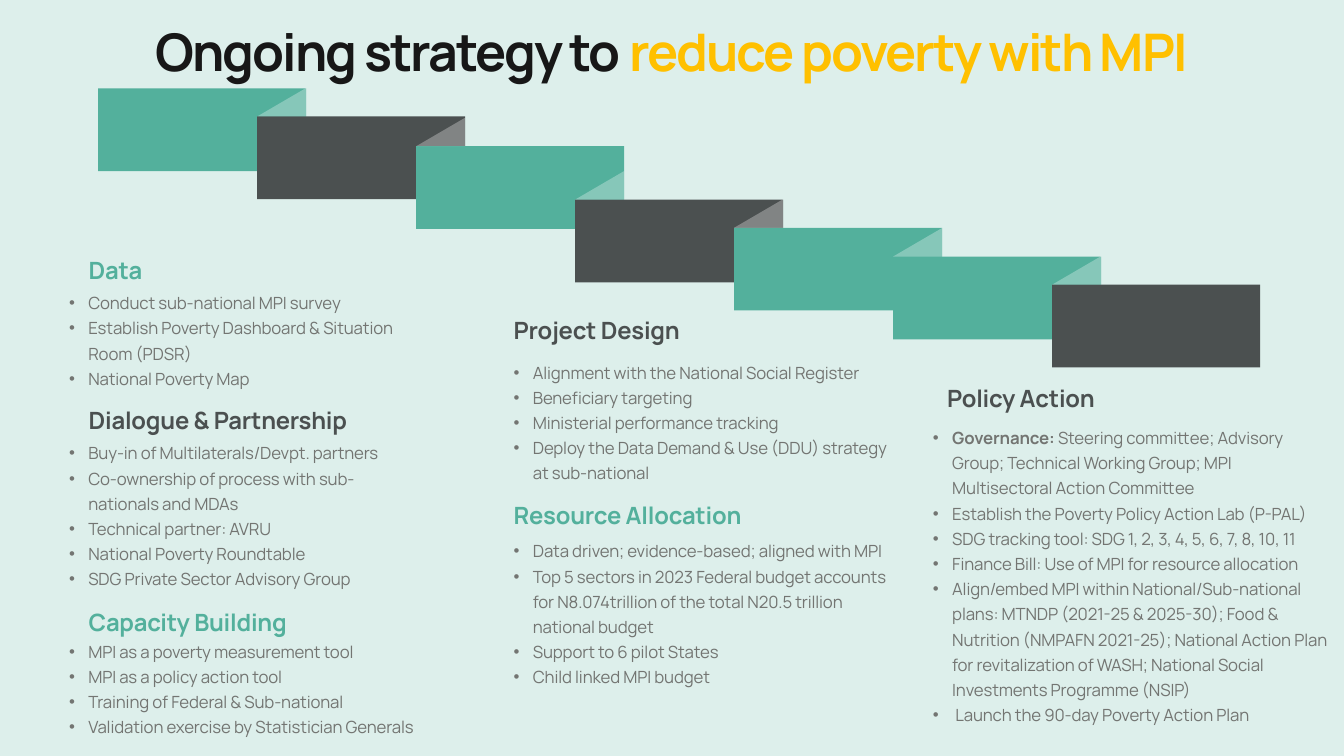
from collections import namedtuple
from dataclasses import dataclass

from lxml.etree import SubElement
from pptx import Presentation
from pptx.dml.color import RGBColor as Rgb
from pptx.enum.shapes import MSO_SHAPE as Shape
from pptx.enum.text import MSO_ANCHOR as Anchor, MSO_AUTO_SIZE as Auto, PP_ALIGN as Align
from pptx.oxml.ns import qn
from pptx.util import Cm, Pt


@dataclass(frozen=True)
class Theme:
    font: str = "Manrope"
    back: str = "DDEFEB"
    teal: str = "53B09C"
    slate: str = "4B5050"
    ink: str = "171717"
    gold: str = "FFC000"
    body: str = "737572"
    white: str = "FFFFFF"
    title: int = 74
    head: int = 34
    text: int = 24
    pitch: int = 36


THEME = Theme()
LINE = 1.27
INDENT = 0.97

Box = namedtuple("Box", "left top width height")
Part = namedtuple("Part", "drop gap width lines color title items")

TOPS = [0, 1.42, 2.92, 5.61, 7.03, 8.48, 9.9]
TINTS = [THEME.teal, THEME.slate, THEME.teal, THEME.slate,
         THEME.teal, THEME.teal, THEME.slate]

LEFT = [
    Part(0, 1.71, 17.75, 4, THEME.teal, "Data", [
        "Conduct sub-national MPI survey",
        "Establish Poverty Dashboard & Situation Room (PDSR)",
        "National Poverty Map"]),
    Part(7.57, 1.71, 17.75, 6, THEME.slate, "Dialogue & Partnership", [
        "Buy-in of Multilaterals/Devpt. partners",
        "Co-ownership of process with sub-nationals and MDAs",
        "Technical partner: AVRU",
        "National Poverty Roundtable",
        "SDG Private Sector Advisory Group"]),
    Part(17.76, 1.52, 19.79, 4, THEME.teal, "Capacity Building", [
        "MPI as a poverty measurement tool",
        "MPI as a policy action tool",
        "Training of Federal & Sub-national",
        "Validation exercise by Statistician Generals"]),
]
MIDDLE = [
    Part(0, 2.16, 19.58, 5, THEME.slate, "Project Design", [
        "Alignment with the National Social Register",
        "Beneficiary targeting",
        "Ministerial performance tracking",
        "Deploy the Data Demand & Use (DDU) strategy at sub-national"]),
    Part(9.32, 1.85, 20.09, 6, THEME.teal, "Resource Allocation", [
        "Data driven; evidence-based; aligned with MPI",
        "Top 5 sectors in 2023 Federal budget accounts for N8.074trillion "
        "of the total N20.5 trillion national budget",
        "Support to 6 pilot States",
        "Child linked MPI budget"]),
]
RIGHT = [
    Part(0, 2.03, 20.52, 12, THEME.slate, "Policy Action", [
        ("Governance: ", "Steering committee; Advisory Group; Technical Working "
                         "Group; MPI Multisectoral Action Committee"),
        "Establish the Poverty Policy Action Lab (P-PAL)",
        "SDG tracking tool: SDG 1, 2, 3, 4, 5, 6, 7, 8, 10, 11",
        "Finance Bill: Use of MPI for resource allocation",
        "Align/embed MPI within National/Sub-national plans: MTNDP (2021-25 & "
        "2025-30); Food & Nutrition (NMPAFN 2021-25); National Action Plan for "
        "revitalization of WASH; National Social Investments Programme (NSIP)",
        " Launch the 90-day Poverty Action Plan"]),
]


def write(para, text, size=THEME.text, color=THEME.body, bold=False, track=-20):
    run = para.add_run()
    run.text = text
    font = run.font
    font.name, font.size, font.bold = THEME.font, Pt(size), bold
    font.color.rgb = Rgb.from_string(color)
    run._r.get_or_add_rPr().set("spc", str(track))


def place(shape, box):
    shape.left, shape.top, shape.width, shape.height = map(Cm, box)


def paint(shape, color, alpha=None):
    shape.shadow.inherit = False
    shape.line.fill.background()
    shape.fill.solid()
    shape.fill.fore_color.rgb = Rgb.from_string(color)
    if alpha:
        tint = shape.fill._xPr.find(".//" + qn("a:srgbClr"))
        SubElement(tint, qn("a:alpha")).set("val", str(alpha * 1000))


def bullet(para):
    para.line_spacing = Pt(THEME.pitch)
    props = para._p.get_or_add_pPr()
    props.set("marL", str(Cm(INDENT)))
    props.set("indent", str(-Cm(INDENT)))
    SubElement(props, qn("a:buFont")).set("typeface", "Arial")
    SubElement(props, qn("a:buChar")).set("char", "•")


def header(slide, box):
    title = slide.shapes.title
    place(title, box)
    frame = title.text_frame
    frame.auto_size, frame.word_wrap = Auto.NONE, True
    frame.vertical_anchor = Anchor.BOTTOM
    frame.margin_top = frame.margin_bottom = 0
    para = frame.paragraphs[0]
    para.alignment, para.line_spacing = Align.CENTER, 1.0
    for text, color in [("Ongoing strategy to ", THEME.ink),
                        ("reduce poverty with MPI", THEME.gold)]:
        write(para, text, size=THEME.title, color=color, bold=True, track=-290)


def ribbon(slide, box):
    wide, high, fold = 10.48, 4.17, 1.44
    step = (box.width - wide) / (len(TOPS) - 1)
    for i, (top, tint) in enumerate(zip(TOPS, TINTS)):
        spot = Box(box.left + i * step, box.top + top, wide, high)
        paint(slide.shapes.add_shape(Shape.RECTANGLE, *map(Cm, spot)), tint)
    for i, top in enumerate(TOPS[1:], 1):
        near = Cm(box.left + i * step)
        far = Cm(box.left + (i - 1) * step + wide)
        base = Cm(box.top + top)
        pen = slide.shapes.build_freeform(far, base - Cm(fold))
        pen.add_line_segments([(near, base), (far, base)])
        paint(pen.convert_to_shape(), THEME.white, alpha=30)


def column(slide, box, parts, inset=0):
    for part in parts:
        top = box.top + part.drop
        spot = Box(box.left + inset, top, box.width, 1.7)
        frame = slide.shapes.add_textbox(*map(Cm, spot)).text_frame
        frame.word_wrap, frame.vertical_anchor = True, Anchor.BOTTOM
        frame.margin_top = frame.margin_bottom = Cm(0.05)
        write(frame.paragraphs[0], part.title, size=THEME.head,
              color=part.color, bold=True, track=-30)

        spot = Box(box.left, top + part.gap, part.width, part.lines * LINE + 0.25)
        frame = slide.shapes.add_textbox(*map(Cm, spot)).text_frame
        frame.word_wrap = True
        for i, item in enumerate(part.items):
            para = frame.add_paragraph() if i else frame.paragraphs[0]
            bullet(para)
            lead, rest = item if isinstance(item, tuple) else ("", item)
            if lead:
                write(para, lead, bold=True)
            write(para, rest)


def main():
    deck = Presentation()
    deck.slide_width, deck.slide_height = Cm(67.72), Cm(38.1)
    slide = deck.slides.add_slide(deck.slide_layouts[5])
    fill = slide.background.fill
    fill.solid()
    fill.fore_color.rgb = Rgb.from_string(THEME.back)

    ribbon(slide, Box(4.95, 4.45, 58.54, 14.07))
    header(slide, Box(4.22, 0.56, 59.26, 3.57))
    column(slide, Box(3.23, 12.67, 16.43, 24.6), LEFT, inset=0.99)
    column(slide, Box(25.63, 15.72, 16.43, 19), MIDDLE)
    column(slide, Box(46.76, 19.15, 17.32, 18), RIGHT, inset=0.71)
    deck.save("out.pptx")


if __name__ == "__main__":
    main()
